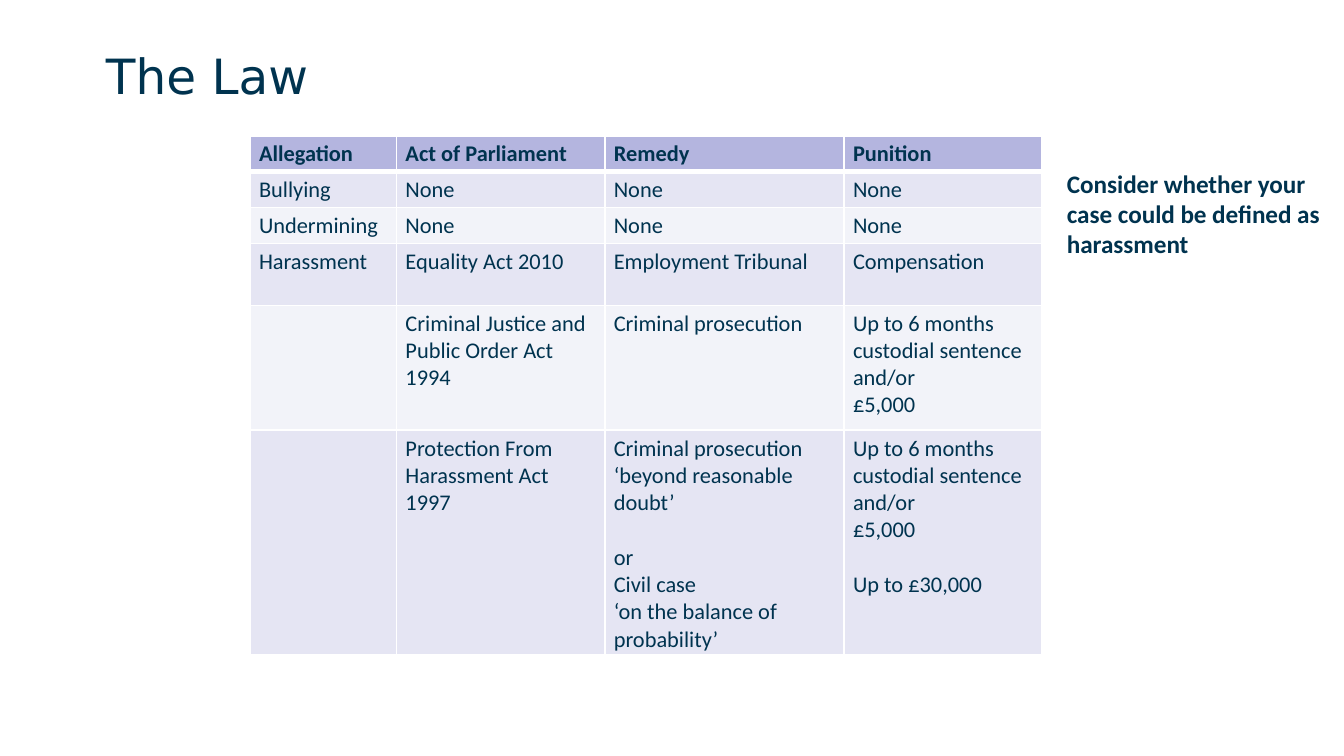
from lxml import etree
from pptx import Presentation
from pptx.dml.color import RGBColor
from pptx.enum.text import MSO_ANCHOR
from pptx.oxml.ns import qn
from pptx.util import Inches, Pt

MIDDLE = MSO_ANCHOR.MIDDLE
NAVY = RGBColor(0x00, 0x33, 0x4F)
HEADER_FILL = RGBColor(0xB4, 0xB5, 0xDF)
BAND_FILLS = (RGBColor(0xF2, 0xF3, 0xF9), RGBColor(0xE5, 0xE5, 0xF3))
WHITE = RGBColor(0xFF, 0xFF, 0xFF)
BODY_FONT = "Calibri"

TITLE = "The Law"
NOTE = "Consider whether your case could be defined as harassment"
CUSTODY = ["Up to 6 months custodial sentence and/or", "£5,000"]
# Each cell is a list of blocks; each block is a list of paragraphs.
ROWS = [
    [[["Allegation"]], [["Act of Parliament"]], [["Remedy"]], [["Punition"]]],
    [[["Bullying"]], [["None"]], [["None"]], [["None"]]],
    [[["Undermining"]], [["None"]], [["None"]], [["None"]]],
    [[["Harassment"]], [["Equality Act 2010"]], [["Employment Tribunal"]], [["Compensation"]]],
    [[], [["Criminal Justice and Public Order Act 1994"]], [["Criminal prosecution"]], [CUSTODY]],
    [
        [],
        [["Protection From Harassment Act 1997"]],
        [
            ["Criminal prosecution", "‘beyond reasonable doubt’"],
            ["or", "Civil case", "‘on the balance of probability’"],
        ],
        [CUSTODY, ["Up to £30,000"]],
    ],
]
SLIDE_WIDTH = 10
COLUMN_WIDTHS = [1.09, 1.55, 1.78, 1.47]
ROW_HEIGHTS = [0.26, 0.26, 0.26, 0.46, 0.93, 1.64]
BLOCK_GAP = Pt(14.6)


def style(paragraph, size, bold=False, name=BODY_FONT):
    font = paragraph.font
    font.name, font.size, font.bold = name, Pt(size), bold
    font.color.rgb = NAVY


def add_text(slide, text, left, top, width, height):
    box = slide.shapes.add_textbox(Inches(left), Inches(top), Inches(width), Inches(height))
    box.text_frame.word_wrap = True
    paragraph = box.text_frame.paragraphs[0]
    paragraph.text = text
    return box.text_frame, paragraph


def set_borders(cell, bottom_width):
    properties = cell._tc.get_or_add_tcPr()
    for index, side in enumerate("LRTB"):
        width = bottom_width if side == "B" else 1
        line = etree.Element(qn(f"a:ln{side}"), w=str(Pt(width)))
        fill = etree.SubElement(line, qn("a:solidFill"))
        etree.SubElement(fill, qn("a:srgbClr"), val=str(WHITE))
        properties.insert(index, line)


def fill_cell(cell, blocks, row_index):
    is_header = row_index == 0
    cell.margin_left = cell.margin_right = Pt(4.85)
    cell.margin_top = cell.margin_bottom = Pt(2.43)
    cell.fill.solid()
    cell.fill.fore_color.rgb = HEADER_FILL if is_header else BAND_FILLS[row_index % 2]
    set_borders(cell, 3 if is_header else 1)
    lines = [
        (text, block_index > 0 and line_index == 0)
        for block_index, block in enumerate(blocks)
        for line_index, text in enumerate(block)
    ]
    frame = cell.text_frame
    for index, (text, starts_block) in enumerate(lines):
        paragraph = frame.add_paragraph() if index else frame.paragraphs[0]
        paragraph.text = text
        if starts_block:
            paragraph.space_before = BLOCK_GAP
        style(paragraph, 12, is_header)


def add_law_table(slide):
    table = slide.shapes.add_table(
        len(ROWS), len(COLUMN_WIDTHS), Inches(1.86), Inches(1.01),
        Inches(sum(COLUMN_WIDTHS)), Inches(sum(ROW_HEIGHTS)),
    ).table
    for column, width in zip(table.columns, COLUMN_WIDTHS):
        column.width = Inches(width)
    for row_index, (row, height) in enumerate(zip(table.rows, ROW_HEIGHTS)):
        row.height = Inches(height)
        for cell, blocks in zip(row.cells, ROWS[row_index]):
            fill_cell(cell, blocks, row_index)


def main():
    presentation = Presentation()
    presentation.slide_width = Inches(SLIDE_WIDTH)
    presentation.slide_height = Inches(SLIDE_WIDTH * 9 / 16)
    slide = presentation.slides.add_slide(presentation.slide_layouts[6])

    frame, title = add_text(slide, TITLE, 0.69, 0.3, 8.62, 0.57)
    frame.vertical_anchor = MIDDLE
    title.line_spacing = 0.9
    style(title, 26, name="DejaVu Sans")

    add_law_table(slide)

    _, note = add_text(slide, NOTE, 7.84, 1.2, 2.25, 0.78)
    style(note, 13.5, bold=True)
    presentation.save("out.pptx")


if __name__ == "__main__":
    main()
